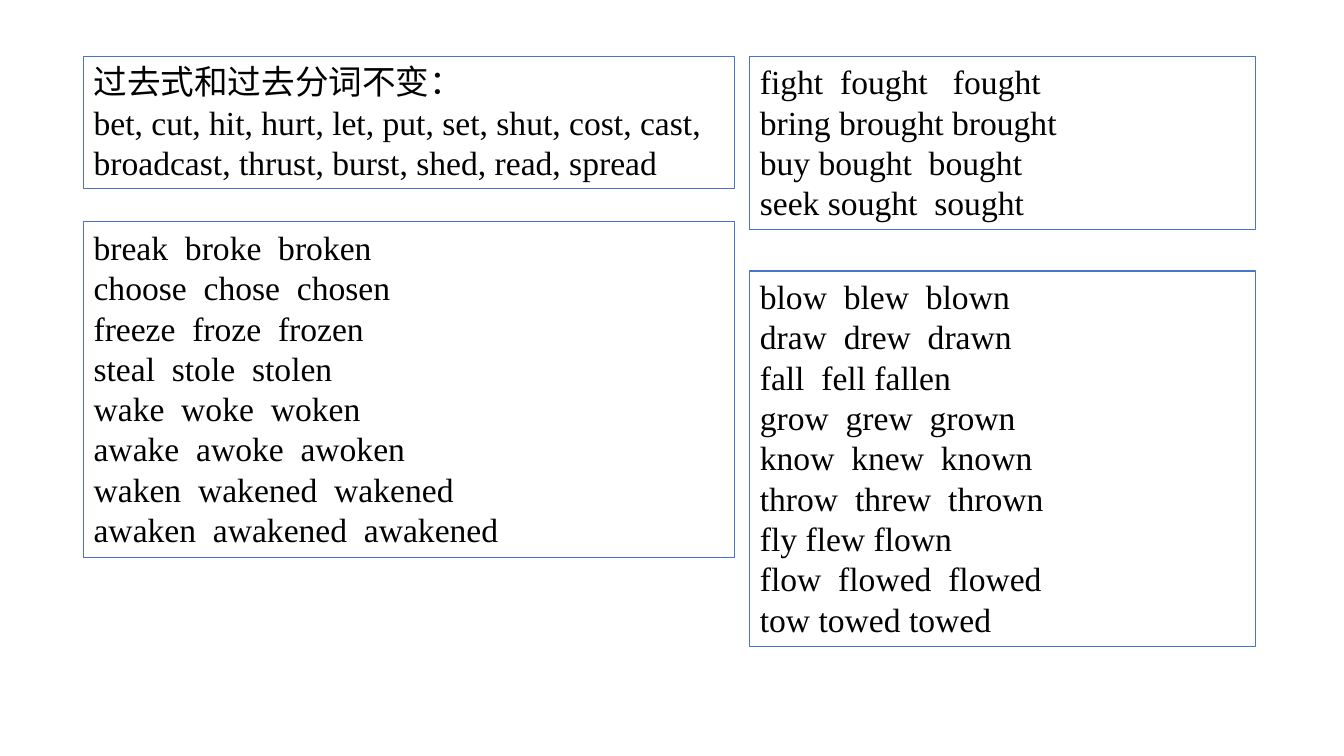
import pptx
import pptx.dml.color
import pptx.enum.text
import pptx.util
from pptx.util import Cm

BLUE = pptx.dml.color.RGBColor(0x48, 0x74, 0xCB)
BLACK = pptx.dml.color.RGBColor(0x00, 0x00, 0x00)

LEFT_COLUMN = (Cm(2.11), Cm(16.41))
RIGHT_COLUMN = (Cm(18.9), Cm(12.73))
TOP = Cm(1.42)

# Each group: column (left, width), top, height, lines
verb_groups = [
    (LEFT_COLUMN, TOP, Cm(3.33), [
        "过去式和过去分词不变：",
        "bet, cut, hit, hurt, let, put, set, shut, cost, cast, "
        "broadcast, thrust, burst, shed, read, spread",
    ]),
    (LEFT_COLUMN, Cm(5.59), Cm(8.46), [
        "break  broke  broken",
        "choose  chose  chosen",
        "freeze  froze  frozen",
        "steal  stole  stolen",
        "wake  woke  woken",
        "awake  awoke  awoken",
        "waken  wakened  wakened",
        "awaken  awakened  awakened",
    ]),
    (RIGHT_COLUMN, TOP, Cm(4.37), [
        "fight  fought   fought",
        "bring brought brought",
        "buy bought  bought",
        "seek sought  sought",
    ]),
    (RIGHT_COLUMN, Cm(6.83), Cm(9.47), [
        "blow  blew  blown",
        "draw  drew  drawn",
        "fall  fell fallen",
        "grow  grew  grown",
        "know  knew  known",
        "throw  threw  thrown",
        "fly flew flown",
        "flow  flowed  flowed",
        "tow towed towed",
    ]),
]

deck = pptx.Presentation()
deck.slide_width = Cm(33.87)
deck.slide_height = Cm(19.05)
slide = deck.slides.add_slide(deck.slide_layouts[6])

for (left, width), top, height, verb_lines in verb_groups:
    verb_box = slide.shapes.add_textbox(left, top, width, height)
    verb_box.line.color.rgb = BLUE
    verb_box.line.width = pptx.util.Pt(0.75)
    verbs = verb_box.text_frame
    verbs.word_wrap = True
    verbs.auto_size = pptx.enum.text.MSO_AUTO_SIZE.SHAPE_TO_FIT_TEXT
    verbs.text = "\n".join(verb_lines)
    for paragraph in verbs.paragraphs:
        for run in paragraph.runs:
            run.font.name = "Times New Roman"
            run.font.size = pptx.util.Pt(24)
            run.font.color.rgb = BLACK

deck.save("out.pptx")
